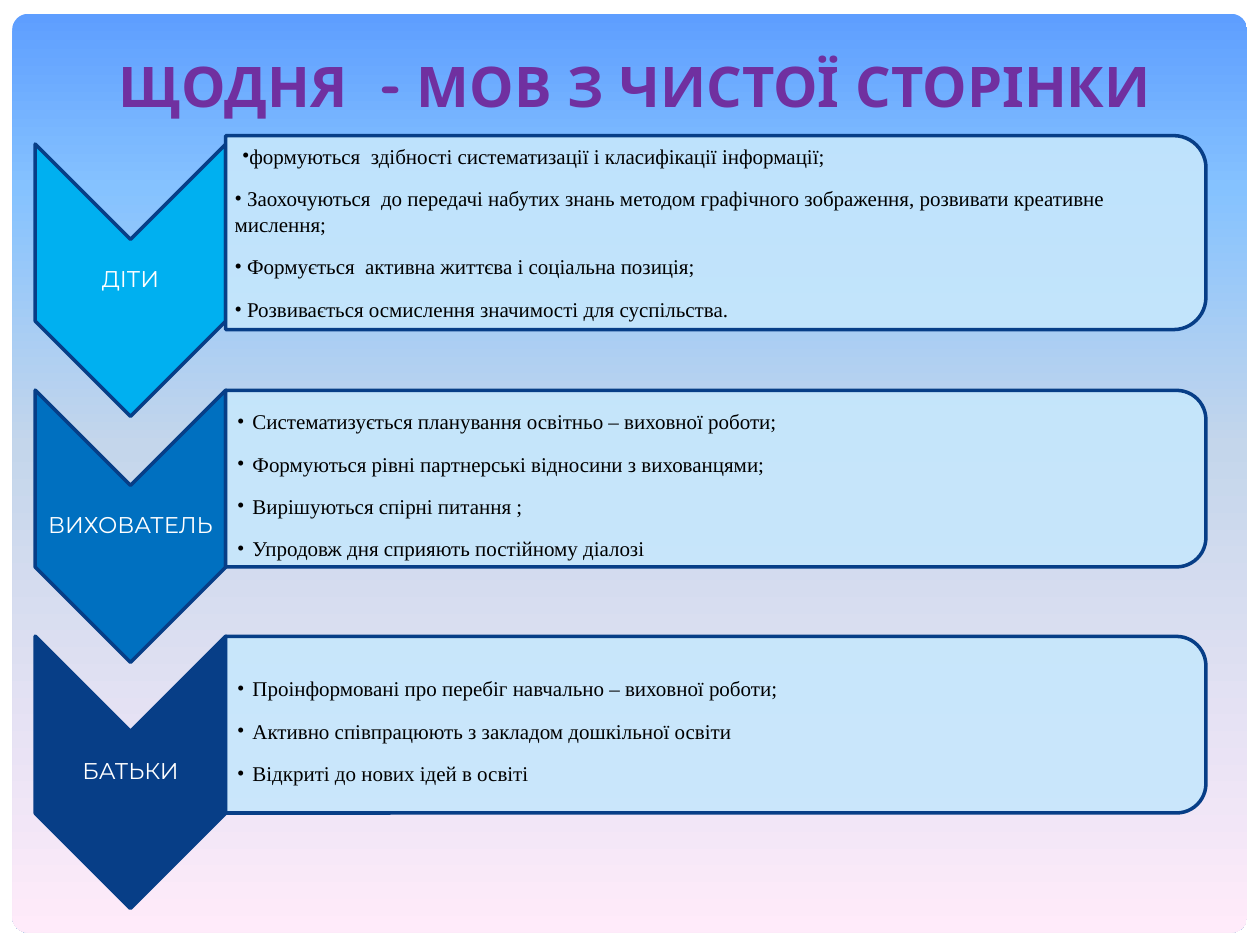
from copy import deepcopy

from pptx import Presentation
from pptx.dml.color import RGBColor
from pptx.enum.shapes import MSO_SHAPE
from pptx.enum.text import MSO_ANCHOR, PP_ALIGN
from pptx.oxml.ns import qn
from pptx.util import Cm, Pt
from lxml.etree import SubElement

WHITE = RGBColor(0xFF, 0xFF, 0xFF)
BLACK = RGBColor(0x00, 0x00, 0x00)
PURPLE = RGBColor(0x70, 0x30, 0xA0)
SKY = RGBColor(0x00, 0xB0, 0xF0)
BLUE = RGBColor(0x00, 0x70, 0xC0)
NAVY = RGBColor(0x07, 0x3E, 0x87)
PALE = RGBColor(0xC6, 0xE7, 0xFC)
SUNSET = (
    (0, RGBColor(0x5E, 0x9E, 0xFF)),
    (19, RGBColor(0x85, 0xC2, 0xFF)),
    (47, RGBColor(0xC4, 0xD6, 0xEB)),
    (100, RGBColor(0xFF, 0xEB, 0xFA)),
)

SLIDE_WIDTH, SLIDE_HEIGHT = 25.4, 19.05
ROW_PITCH = 4.96
FIRST_CHEVRON_Y = 5.65
FIRST_PANEL_Y = 4.69
CHEVRON_X, PANEL_X = 2.63, 14.43

ROWS = (
    ("ДІТИ", SKY, 3.91, 0.18,
     dict(space_after=10),
     ("формуються  здібності систематизації і класифікації інформації;",
      " Заохочуються  до передачі набутих знань методом графічного зображення, "
      "розвивати креативне мислення;",
      " Формується  активна життєва і соціальна позиція;",
      " Розвивається осмислення значимості для суспільства.")),
    ("ВИХОВАТЕЛЬ", BLUE, 3.56, 0.23,
     dict(space_after=2.5, line_spacing=1.5, hanging=0.31),
     ("Систематизується планування освітньо – виховної роботи;",
      "Формуються рівні партнерські відносини з вихованцями;",
      "Вирішуються спірні питання ;",
      "Упродовж дня сприяють постійному діалозі")),
    ("БАТЬКИ", NAVY, 3.56, 0.23,
     dict(space_after=2.5, line_spacing=1.5, hanging=0.31),
     ("Проінформовані про перебіг навчально – виховної роботи;",
      "Активно співпрацюють з закладом дошкільної освіти",
      "Відкриті до нових ідей в освіті")),
)


def write(paragraph, text, font="Times New Roman", size=12, color=BLACK, bold=False,
          align=PP_ALIGN.LEFT, line_spacing=1.0, space_after=0, hanging=None):
    paragraph.alignment = align
    paragraph.line_spacing = line_spacing
    paragraph.space_after = Pt(space_after)
    if hanging is not None:
        properties = paragraph._p.get_or_add_pPr()
        properties.set("marL", str(Cm(hanging)))
        properties.set("indent", str(-Cm(hanging)))
        SubElement(properties, qn("a:buFont"), typeface="Times New Roman")
        SubElement(properties, qn("a:buChar"), char="•")
    run = paragraph.add_run()
    run.text = text
    run.font.name = font
    run.font.size = Pt(size)
    run.font.bold = bold
    run.font.color.rgb = color
    return run


def paint_gradient(fill, element, stops):
    fill.gradient()
    fill.gradient_angle = 270
    stop_list = next(element.iter(qn("a:gsLst")))
    while len(stop_list) < len(stops):
        stop_list.append(deepcopy(stop_list[0]))
    for stop, (position, color) in zip(fill.gradient_stops, stops):
        stop.position = position / 100
        stop.color.rgb = color


class Deck:
    border = NAVY
    border_width = Pt(2)

    def __init__(self):
        self.presentation = Presentation()
        self.presentation.slide_width = Cm(SLIDE_WIDTH)
        self.presentation.slide_height = Cm(SLIDE_HEIGHT)
        self.slide = self.presentation.slides.add_slide(self.presentation.slide_layouts[6])

    def backdrop(self):
        paint_gradient(self.slide.background.fill, self.slide._element, SUNSET)
        sheet = self.shape(MSO_SHAPE.RECTANGLE, 0, 0, SLIDE_WIDTH, SLIDE_HEIGHT)
        sheet.fill.solid()
        sheet.fill.fore_color.rgb = WHITE
        sheet.line.fill.background()
        card = self.shape(MSO_SHAPE.ROUNDED_RECTANGLE, 0.25, 0.28, 24.89, 18.52)
        card.adjustments[0] = 0.017
        paint_gradient(card.fill, card._element, SUNSET)
        card.line.fill.background()

    def shape(self, kind, left, top, width, height):
        shape = self.slide.shapes.add_shape(kind, Cm(left), Cm(top), Cm(width), Cm(height))
        shape.shadow.inherit = False
        return shape

    def turned(self, kind, center_x, center_y, width, height, color, opacity=100):
        shape = self.shape(kind, center_x - width / 2, center_y - height / 2, width, height)
        shape.rotation = 90
        shape.fill.solid()
        shape.fill.fore_color.rgb = color
        if opacity < 100:
            tint = next(shape._element.spPr.iter(qn("a:srgbClr")))
            SubElement(tint, qn("a:alpha"), val=str(opacity * 1000))
        shape.line.color.rgb = self.border
        shape.line.width = self.border_width

    def text_box(self, left, top, width, height, anchor=MSO_ANCHOR.MIDDLE, inset=0.03):
        frame = self.slide.shapes.add_textbox(Cm(left), Cm(top), Cm(width), Cm(height)).text_frame
        frame.word_wrap = True
        frame.vertical_anchor = anchor
        frame.margin_left = Cm(inset)
        frame.margin_top = frame.margin_right = frame.margin_bottom = Cm(0.03)
        return frame

    def title(self, text):
        frame = self.text_box(1.3, 0.91, 23.01, 1.63, anchor=MSO_ANCHOR.TOP, inset=0.25)
        frame.margin_right = Cm(0.25)
        frame.margin_top = frame.margin_bottom = Cm(0.13)
        write(frame.paragraphs[0], text, font="Quicksand", size=32, color=PURPLE,
              bold=True, align=PP_ALIGN.CENTER)

    def chevron(self, center_y, label, color):
        self.turned(MSO_SHAPE.CHEVRON, CHEVRON_X, center_y, 5.49, 3.84, color)
        frame = self.text_box(0.71, center_y - 0.83, 3.84, 1.65)
        write(frame.paragraphs[0], label, font="Montserrat", size=13, color=WHITE,
              align=PP_ALIGN.CENTER, line_spacing=0.9)

    def panel(self, center_y, height, inset, items, style):
        self.turned(MSO_SHAPE.ROUND_2_SAME_RECTANGLE, PANEL_X, center_y, height, 19.76,
                    PALE, opacity=90)
        frame = self.text_box(4.55, center_y - 1.62, 19.58, 3.23, inset=inset)
        for index, item in enumerate(items):
            paragraph = frame.add_paragraph() if index else frame.paragraphs[0]
            write(paragraph, item, **{"hanging": 0, **style})
        return frame


def main():
    deck = Deck()
    deck.backdrop()
    deck.title("ЩОДНЯ  - МОВ З ЧИСТОЇ СТОРІНКИ")
    panels = []
    for index, (audience, color, height, inset, style, benefits) in enumerate(ROWS):
        offset = index * ROW_PITCH
        deck.chevron(FIRST_CHEVRON_Y + offset, audience, color)
        panels.append(deck.panel(FIRST_PANEL_Y + offset, height, inset, benefits, style))
    children_lead = panels[0].paragraphs[0]
    children_lead._p.get_or_add_pPr().set("marL", str(Cm(0.15)))
    deck.presentation.save("out.pptx")


if __name__ == "__main__":
    main()
